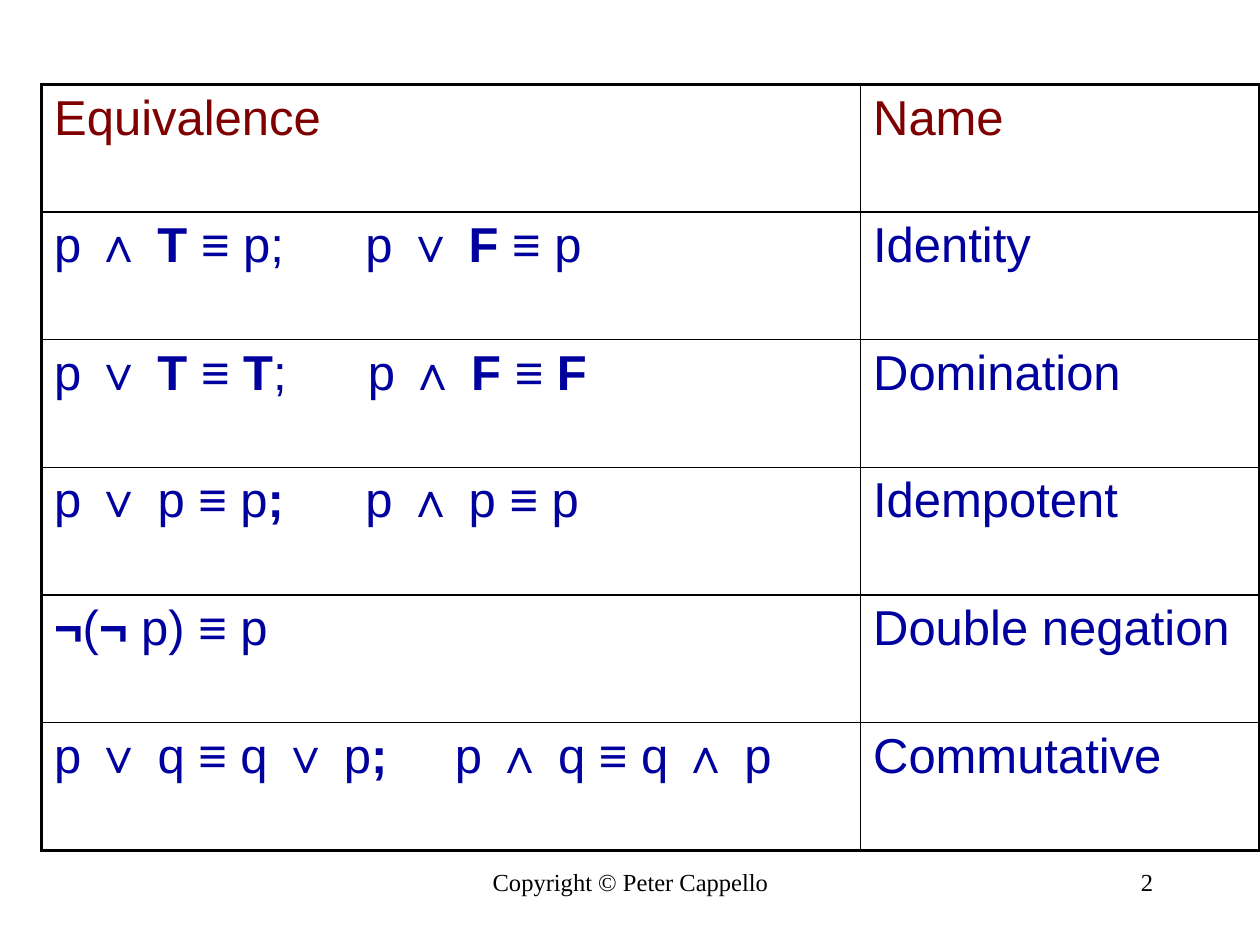
import pptx
import pptx.util
import pptx.dml.color
import pptx.enum.text
import pptx.oxml
import pptx.oxml.ns

Inches = pptx.util.Inches
Pt = pptx.util.Pt
ALIGN = pptx.enum.text.PP_ALIGN
NS = pptx.oxml.ns.nsdecls("a")


def paint(font, form):
    """Set font attributes from a dict; the colour is a hex string."""
    for key, val in form.items():
        if key == "color":
            font.color.rgb = pptx.dml.color.RGBColor.from_string(val)
        else:
            setattr(font, key, val)


deck = pptx.Presentation()
deck.slide_width, deck.slide_height = Inches(10), Inches(7.5)
slide = deck.slides.add_slide(deck.slide_layouts[6])

# Footer and slide number
small = {"name": "Times New Roman", "size": Pt(14), "color": "000000"}
for text, left, width, align in [
    ("Copyright © Peter Cappello", 3.42, 3.17, ALIGN.CENTER),
    ("2", 7.17, 2.08, ALIGN.RIGHT),
]:
    box = slide.shapes.add_textbox(Inches(left), Inches(6.83), Inches(width), Inches(0.5))
    box.text_frame.word_wrap = True
    para = box.text_frame.paragraphs[0]
    para.alignment = align
    run = para.add_run()
    run.text = text
    paint(run.font, small)

# Laws: an asterisk switches bold on or off, a tab leads to the second law
laws = [
    ("Equivalence", "Name", None),
    ("p *∧ T *≡ p;\tp *∨ F *≡ p", "Identity", 2.47),
    ("p *∨ T *≡ *T*;\tp *∧ F *≡ *F", "Domination", 2.49),
    ("p *∨ *p ≡ p*;\t*p *∧ *p ≡ p", "Idempotent", 2.47),
    ("*¬*(*¬ *p) ≡ p", "Double negation", None),
    ("p *∨ *q ≡ q *∨ *p*;\t*p *∧ *q ≡ q *∧ *p", "Commutative", 3.18),
]
widths = [6.5, 3.17]
rows, cols = len(laws), len(widths)
frame = slide.shapes.add_table(
    rows, cols, Inches(0.33), Inches(0.67), Inches(sum(widths)), Inches(6.08)
)
table = frame.table
table.first_row = table.horz_banding = False
for col, width in zip(table.columns, widths):
    col.width = Inches(width)

for r, (law, name, stop) in enumerate(laws):
    for c, text in enumerate([law, name]):
        cell = table.cell(r, c)
        cell.fill.background()

        # Text
        para = cell.text_frame.paragraphs[0]
        for i, part in enumerate(text.split("*")):
            if part:
                run = para.add_run()
                run.text = part
                paint(run.font, {
                    "name": "Arial",
                    "size": Pt(28),
                    "bold": i % 2 == 1,
                    "color": "00009F" if r else "7F0000",
                })
        if stop and c == 0:
            tabs = f'<a:tabLst {NS}><a:tab pos="{Inches(stop)}" algn="l"/></a:tabLst>'
            para._p.get_or_add_pPr().append(pptx.oxml.parse_xml(tabs))

        # Borders: thick around the table, thin inside
        outer = {"L": c == 0, "R": c == cols - 1, "T": r == 0, "B": r == rows - 1}
        props = cell._tc.get_or_add_tcPr()
        for i, (side, thick) in enumerate(outer.items()):
            line = (
                f'<a:ln{side} {NS} w="{Pt(2.25 if thick else 1)}">'
                '<a:solidFill><a:srgbClr val="000000"/></a:solidFill>'
                f"</a:ln{side}>"
            )
            props.insert(i, pptx.oxml.parse_xml(line))

deck.save("out.pptx")
